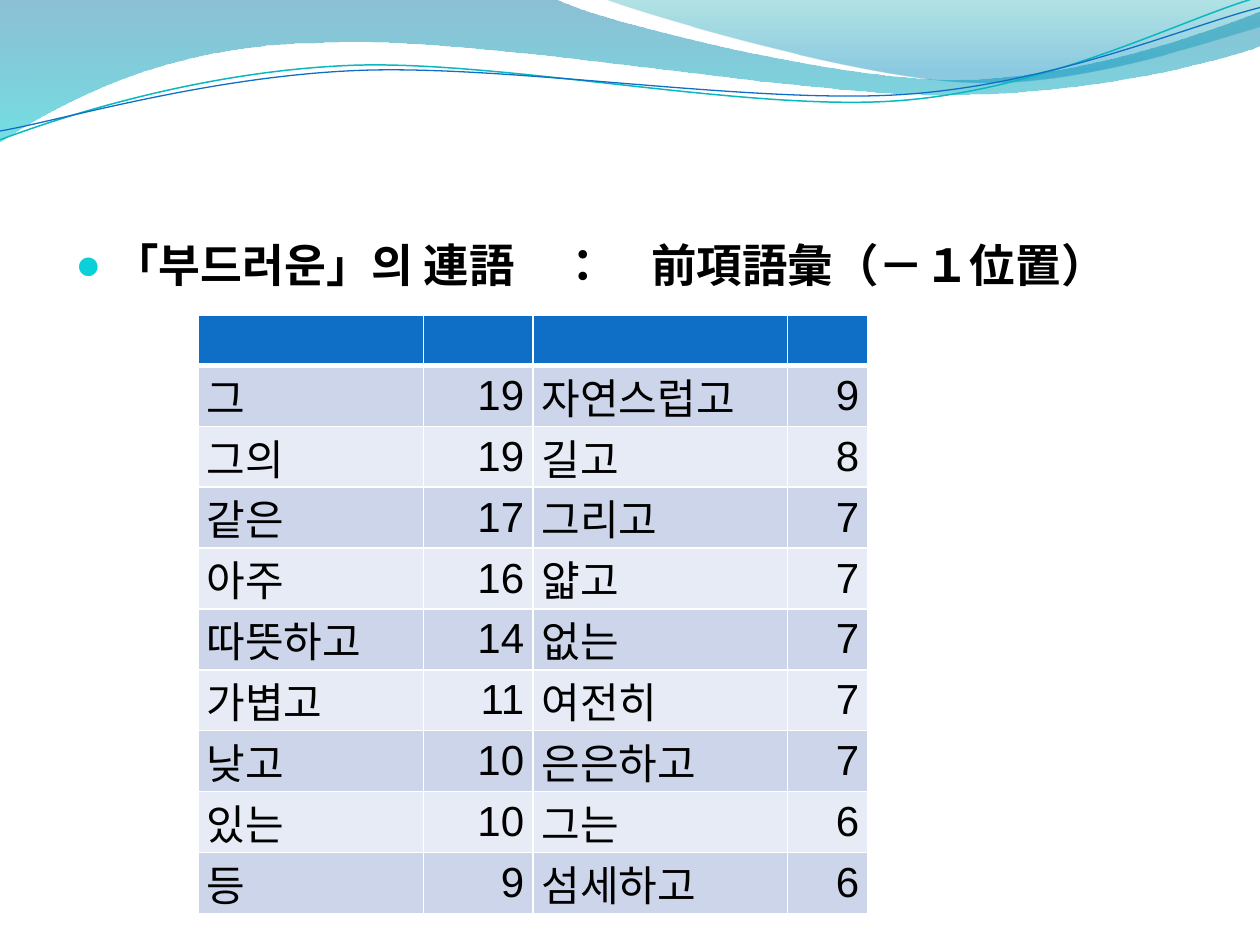
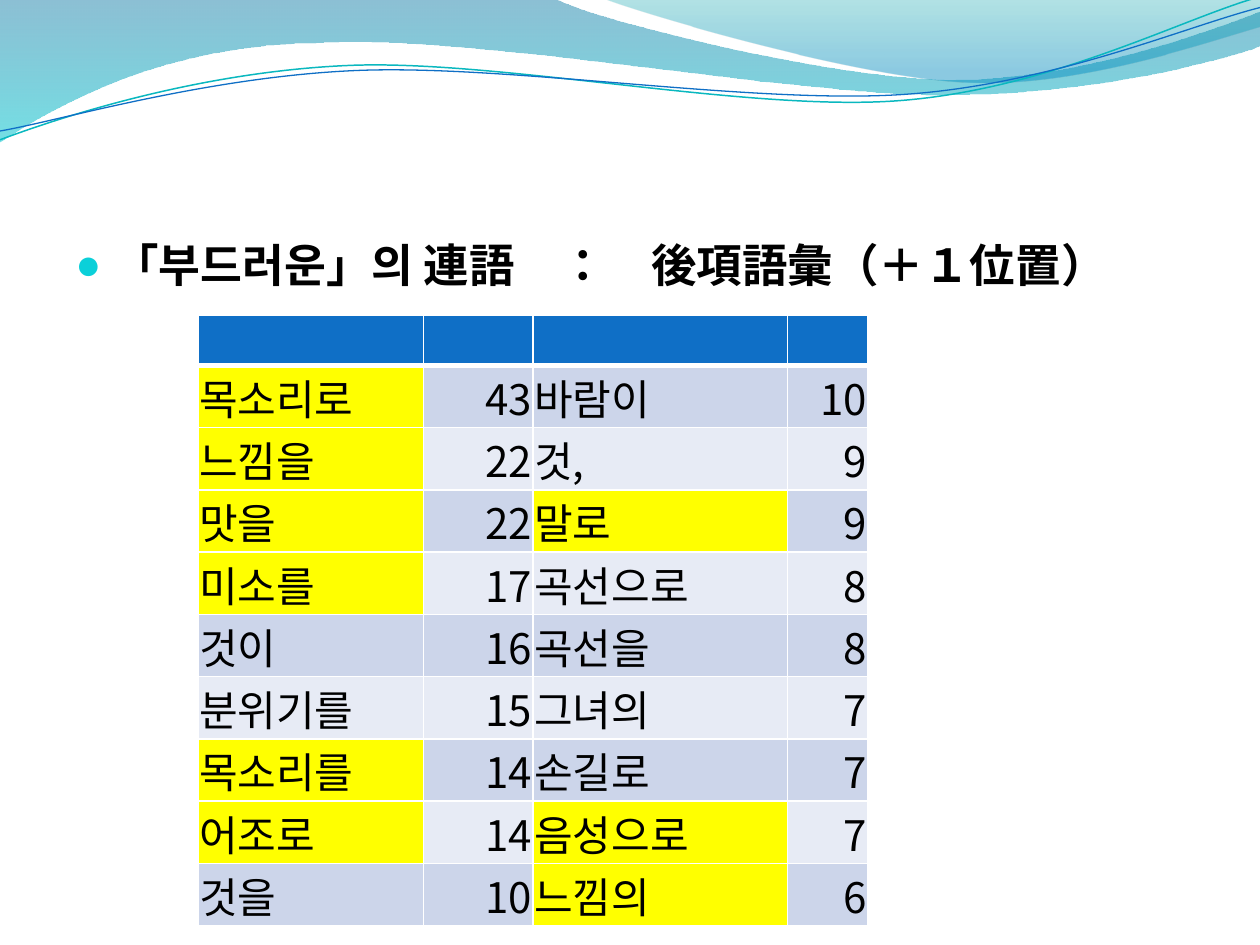
from lxml import etree
from pptx import Presentation
from pptx import util as u
from pptx.dml.color import RGBColor
from pptx.enum import lang, text
from pptx.oxml.ns import qn

PX = 9144
COLORS = {
    "ink": "000000", "white": "FFFFFF", "header": "0F6FC6", "bullet": "0BD0D9",
    "band_dark": "CCD5EA", "band_light": "E7EBF5", "highlight": "FFFF00",
    "wave_blue": "0074A1", "wave_cyan": "00C6CF",
    "crest_teal": "00A1A9", "crest_blue": "008BBF", "line_teal": "0AB8BF",
}
HEADING_FONT, EAST_ASIAN_FONT, NUMBER_FONT = "Cambria", "Noto Sans CJK JP", "Arial"
COLUMN_WIDTHS = (179, 87, 202, 64)
HEADER_HEIGHT = 40

FILLED_WAVES = [
    ([(0, -1), (440, -1), (476, 17, 664, 63, 758, 63), (853, 63, 958, 26, 1000, 9),
      (1001, 36), (983, 44, 870, 76, 746, 75), (622, 75, 382, 28, 257, 34),
      (129, 35, 46, 83, -1, 113), (0, -1)],
     [(0, "wave_blue", 45), (1, "wave_cyan", 55)]),
    ([(479, -1), (509, 11, 682, 62, 769, 65), (856, 69, 961, 32, 1000, 21),
      (1000, 0), (479, -1)],
     [(0, "crest_teal", 30), (0.8, "crest_blue", 45)]),
]
LINE_WAVES = [
    ([(0, 111), (48, 93, 158, 57, 277, 52), (395, 47, 593, 89, 713, 80),
      (833, 71, 938, 15, 998, -2)], "line_teal", 0.85),
    ([(0, 104), (47, 96, 164, 61, 283, 56), (403, 51, 597, 83, 717, 75),
      (836, 67, 941, 21, 1000, 6)], "header", 0.75),
]

SLIDES = [
    {"heading": "「부드러운」의 連語　：　前項語彙（－１位置）",
     "word_font": HEADING_FONT, "number_font": NUMBER_FONT,
     "margins": (7, 0, 7, 0), "height": 475, "highlighted": (),
     "rows": [("그", 19, "자연스럽고", 9), ("그의", 19, "길고", 8), ("같은", 17, "그리고", 7),
              ("아주", 16, "얇고", 7), ("따뜻하고", 14, "없는", 7), ("가볍고", 11, "여전히", 7),
              ("낮고", 10, "은은하고", 7), ("있는", 10, "그는", 6), ("등", 9, "섬세하고", 6)]},
    {"heading": "「부드러운」의 連語　：　後項語彙（＋１位置）",
     "word_font": EAST_ASIAN_FONT, "number_font": EAST_ASIAN_FONT,
     "margins": (1, 1, 1, 0), "height": 485,
     "highlighted": ("목소리로", "느낌을", "맛을", "미소를", "목소리를", "어조로",
                     "말로", "음성으로", "느낌의"),
     "rows": [("목소리로", 43, "바람이", 10), ("느낌을", 22, "것,", 9), ("맛을", 22, "말로", 9),
              ("미소를", 17, "곡선으로", 8), ("것이", 16, "곡선을", 8), ("분위기를", 15, "그녀의", 7),
              ("목소리를", 14, "손길로", 7), ("어조로", 14, "음성으로", 7), ("것을", 10, "느낌의", 6)]},
]


def px(value):
    return u.Emu(round(value * PX))


def rgb(name):
    return RGBColor.from_string(COLORS[name])


def child(parent, tag, **attributes):
    return etree.SubElement(parent, qn(tag), attributes)


def add_wave(slide, segments, closed):
    points = [(px(segment[i]), px(segment[i + 1]))
              for segment in segments for i in range(0, len(segment), 2)]
    builder = slide.shapes.build_freeform(*points[0])
    builder.add_line_segments(points[1:], close=closed)
    shape = builder.convert_to_shape()
    shape.shadow.inherit = False
    vertices = iter(list(shape._element.spPr.iter(qn("a:lnTo"))))
    for segment in segments[1:]:
        first = next(vertices)
        if len(segment) == 6:
            first.tag = qn("a:cubicBezTo")
            for _ in range(2):
                vertex = next(vertices)
                first.append(vertex[0])
                vertex.getparent().remove(vertex)
    return shape


def add_waves(slide):
    for segments, stops in FILLED_WAVES:
        shape = add_wave(slide, segments, True)
        shape.line.fill.background()
        shape.fill.gradient()
        shape.fill.gradient_angle = 270
        for stop, (position, color, _) in zip(shape.fill.gradient_stops, stops):
            stop.position = position
            stop.color.rgb = rgb(color)
        tints = shape._element.spPr.iter(qn("a:srgbClr"))
        for tint, (_, _, opacity) in zip(list(tints), stops):
            child(tint, "a:alpha", val=str(opacity * 1000))
    for segments, color, width in LINE_WAVES:
        shape = add_wave(slide, segments, False)
        shape.fill.background()
        shape.line.color.rgb = rgb(color)
        shape.line.width = u.Pt(width)


def add_run(paragraph, content, font, size, language, bold=False):
    run = paragraph.add_run()
    run.text = content
    run.font.name, run.font.size, run.font.bold = font, u.Pt(size), bold
    run.font.language_id = language
    run.font.color.rgb = rgb("ink")
    child(run._r.get_or_add_rPr(), "a:ea", typeface=EAST_ASIAN_FONT)


def add_heading(slide, content):
    box = slide.shapes.add_textbox(px(50), px(133), px(900), px(559))
    frame = box.text_frame
    frame.word_wrap = True
    frame.margin_top = px(55)
    paragraph = frame.paragraphs[0]
    properties = paragraph._p.get_or_add_pPr()
    properties.set("marL", str(px(30)))
    properties.set("indent", str(px(-30)))
    child(child(properties, "a:buClr"), "a:srgbClr", val=COLORS["bullet"])
    child(properties, "a:buSzPct", val="95000")
    child(properties, "a:buFont", typeface=NUMBER_FONT)
    child(properties, "a:buChar", char="●")
    add_run(paragraph, content, HEADING_FONT, 26, lang.MSO_LANGUAGE_ID.JAPANESE, True)


def style_cell(cell, row, color):
    widths = {"L": 1, "R": 1, "T": 3 if row == 1 else 1, "B": 3 if row == 0 else 1}
    properties = cell._tc.get_or_add_tcPr()
    for side, width in widths.items():
        border = child(properties, f"a:ln{side}", w=str(u.Pt(width)))
        child(child(border, "a:solidFill"), "a:srgbClr", val=COLORS["white"])
    cell.fill.solid()
    cell.fill.fore_color.rgb = rgb(color)


def add_word_table(slide, content):
    rows = content["rows"]
    table = slide.shapes.add_table(len(rows) + 1, len(COLUMN_WIDTHS), px(157), px(250),
                                   px(sum(COLUMN_WIDTHS)), px(content["height"])).table
    table.horz_banding = False
    for column, width in zip(table.columns, COLUMN_WIDTHS):
        column.width = px(width)
    row_height = (content["height"] - HEADER_HEIGHT) / len(rows)
    for index, row in enumerate(table.rows):
        row.height = px(row_height if index else HEADER_HEIGHT)
    for column in range(len(COLUMN_WIDTHS)):
        style_cell(table.cell(0, column), 0, "header")
    for row, values in enumerate(rows, 1):
        band = "band_dark" if row % 2 else "band_light"
        for column, value in enumerate(values):
            cell = table.cell(row, column)
            style_cell(cell, row, "highlight" if value in content["highlighted"] else band)
            cell.vertical_anchor = text.MSO_ANCHOR.MIDDLE
            (cell.margin_left, cell.margin_top,
             cell.margin_right, cell.margin_bottom) = map(px, content["margins"])
            paragraph = cell.text_frame.paragraphs[0]
            is_number = isinstance(value, int)
            if is_number:
                paragraph.alignment = text.PP_ALIGN.RIGHT
            font = content["number_font" if is_number else "word_font"]
            add_run(paragraph, str(value), font, 24, lang.MSO_LANGUAGE_ID.KOREAN)


def main():
    presentation = Presentation()
    presentation.slide_width, presentation.slide_height = px(1000), px(750)
    for content in SLIDES:
        slide = presentation.slides.add_slide(presentation.slide_layouts[6])
        add_waves(slide)
        add_heading(slide, content["heading"])
        add_word_table(slide, content)
    presentation.save("out.pptx")


if __name__ == "__main__":
    main()
